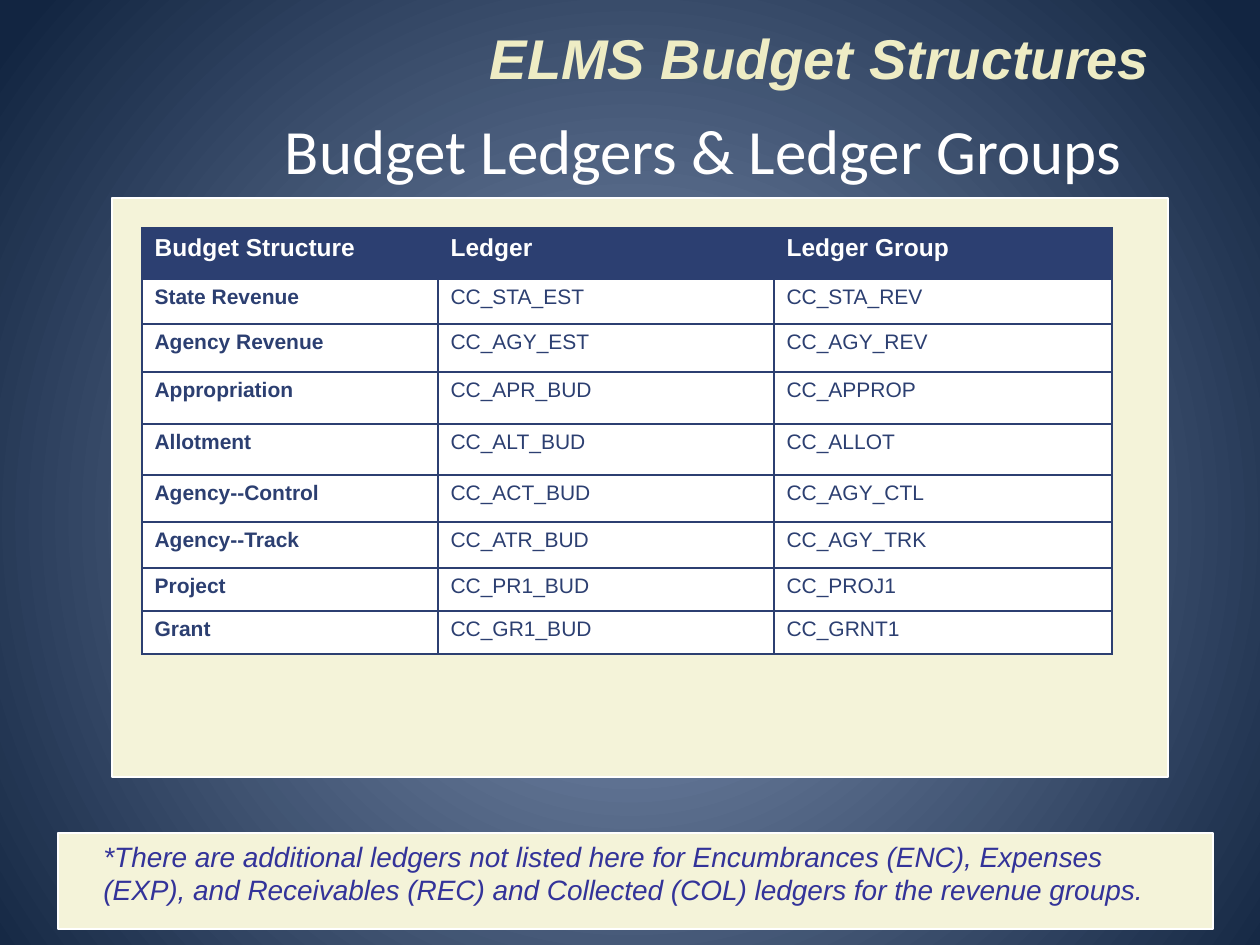
from lxml import etree
from pptx import Presentation
from pptx.dml.color import RGBColor
from pptx.enum.shapes import MSO_SHAPE
from pptx.enum.text import MSO_ANCHOR, MSO_AUTO_SIZE, PP_ALIGN
from pptx.oxml import parse_xml
from pptx.util import Pt

PX = 914400 / 126
RECTANGLE = MSO_SHAPE.RECTANGLE
BOTTOM = MSO_ANCHOR.BOTTOM
LEFT, CENTER = PP_ALIGN.LEFT, PP_ALIGN.CENTER
NO_AUTOFIT = MSO_AUTO_SIZE.NONE
A = "http://schemas.openxmlformats.org/drawingml/2006/main"
P = "http://schemas.openxmlformats.org/presentationml/2006/main"

NAVY, CREAM, WHITE = "2C3F71", "F4F3D9", "FFFFFF"
GRADIENT = [(0, "51DAFF"), (7, "7B85B3"), (14, "7386A7"), (100, "122541")]

COLUMN_WIDTHS = [296, 336, 338]
ROW_HEIGHTS = [51, 45, 48, 52, 51, 47, 46, 43, 43]
LEDGERS = [
    ("Budget Structure", "Ledger", "Ledger Group"),
    ("State Revenue", "CC_STA_EST", "CC_STA_REV"),
    ("Agency Revenue", "CC_AGY_EST", "CC_AGY_REV"),
    ("Appropriation", "CC_APR_BUD", "CC_APPROP"),
    ("Allotment", "CC_ALT_BUD", "CC_ALLOT"),
    ("Agency--Control", "CC_ACT_BUD", "CC_AGY_CTL"),
    ("Agency--Track", "CC_ATR_BUD", "CC_AGY_TRK"),
    ("Project", "CC_PR1_BUD", "CC_PROJ1"),
    ("Grant", "CC_GR1_BUD", "CC_GRNT1"),
]


def px(*lengths):
    """Turn pixel lengths into a list of EMU."""
    return [round(length * PX) for length in lengths]


def write(frame, text, size, color, font="Arial", bold=False, italic=False):
    frame.text = text
    para = frame.paragraphs[0]
    para.font.name = font
    para.font.size = Pt(size)
    para.font.bold = bold
    para.font.italic = italic
    para.font.color.rgb = RGBColor.from_string(color)
    return para


deck = Presentation()
deck.slide_width, deck.slide_height = px(1260, 945)
page = deck.slides.add_slide(deck.slide_layouts[5])

# Radial background
stops = "".join(
    f'<a:gs pos="{percent * 1000}"><a:srgbClr val="{color}"/></a:gs>'
    for percent, color in GRADIENT
)
background = parse_xml(
    f'<p:bg xmlns:p="{P}" xmlns:a="{A}"><p:bgPr><a:gradFill><a:gsLst>{stops}</a:gsLst>'
    '<a:path path="circle"><a:fillToRect l="10000" t="110000" r="10000" b="100000"/></a:path>'
    "</a:gradFill><a:effectLst/></p:bgPr></p:bg>"
)
page.element.cSld.insert(0, background)

# Title
title = page.shapes.title
title.left, title.top, title.width, title.height = px(285, 61, 975, 126)
frame = title.text_frame
frame.auto_size = NO_AUTOFIT
frame.vertical_anchor = BOTTOM
frame.margin_left = frame.margin_right = frame.margin_bottom = 0
write(frame, "Budget Ledgers & Ledger Groups", 36, WHITE, font="Calibri").alignment = LEFT

# Cream panels behind the table and the footnote
for bounds in [(112, 198, 1056, 579), (58, 833, 1155, 96)]:
    panel = page.shapes.add_shape(RECTANGLE, *px(*bounds))
    panel.shadow.inherit = False
    panel.fill.solid()
    panel.fill.fore_color.rgb = RGBColor.from_string(CREAM)
    panel.line.color.rgb = RGBColor.from_string(WHITE)
    panel.line.width = Pt(0.75)

# Ledger table
table = page.shapes.add_table(
    len(LEDGERS), len(COLUMN_WIDTHS),
    *px(142, 228, sum(COLUMN_WIDTHS), sum(ROW_HEIGHTS)),
).table
for column, width in zip(table.columns, px(*COLUMN_WIDTHS)):
    column.width = width
for row, height in zip(table.rows, px(*ROW_HEIGHTS)):
    row.height = height

for r, texts in enumerate(LEDGERS):
    header = r == 0
    for c, text in enumerate(texts):
        cell = table.cell(r, c)
        write(cell.text_frame, text, 14 if header else 12,
              WHITE if header else NAVY, bold=header or c == 0)
        properties = cell._tc.get_or_add_tcPr()
        for side in ("lnL", "lnR", "lnT", "lnB"):
            border = etree.SubElement(properties, f"{{{A}}}{side}", w=str(Pt(1)))
            fill = etree.SubElement(border, f"{{{A}}}solidFill")
            etree.SubElement(fill, f"{{{A}}}srgbClr", val=NAVY)
        cell.fill.solid()
        cell.fill.fore_color.rgb = RGBColor.from_string(NAVY if header else WHITE)

# Section heading
heading = page.shapes.add_textbox(*px(393, 11, 854, 86)).text_frame
heading.word_wrap = True
heading.vertical_anchor = BOTTOM
write(heading, "ELMS Budget Structures", 32, "EEECC4",
      bold=True, italic=True).alignment = CENTER

# Footnote
footnote = page.shapes.add_textbox(*px(91, 833, 1090, 81)).text_frame
footnote.word_wrap = True
write(footnote,
      "*There are additional ledgers not listed here for Encumbrances (ENC), "
      "Expenses (EXP), and Receivables (REC) and Collected (COL) ledgers "
      "for the revenue groups.", 16, "333399", italic=True)

deck.save("out.pptx")
